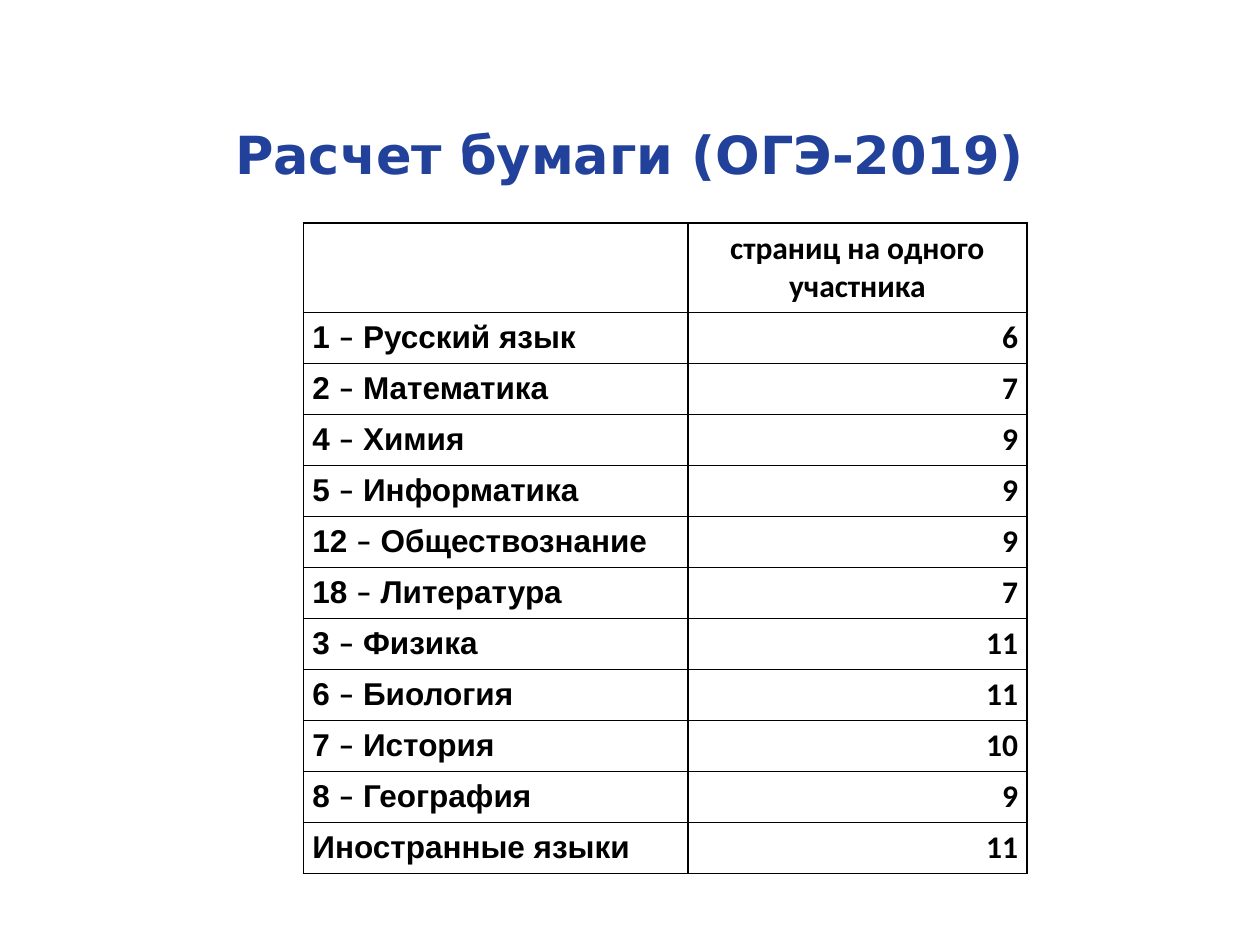
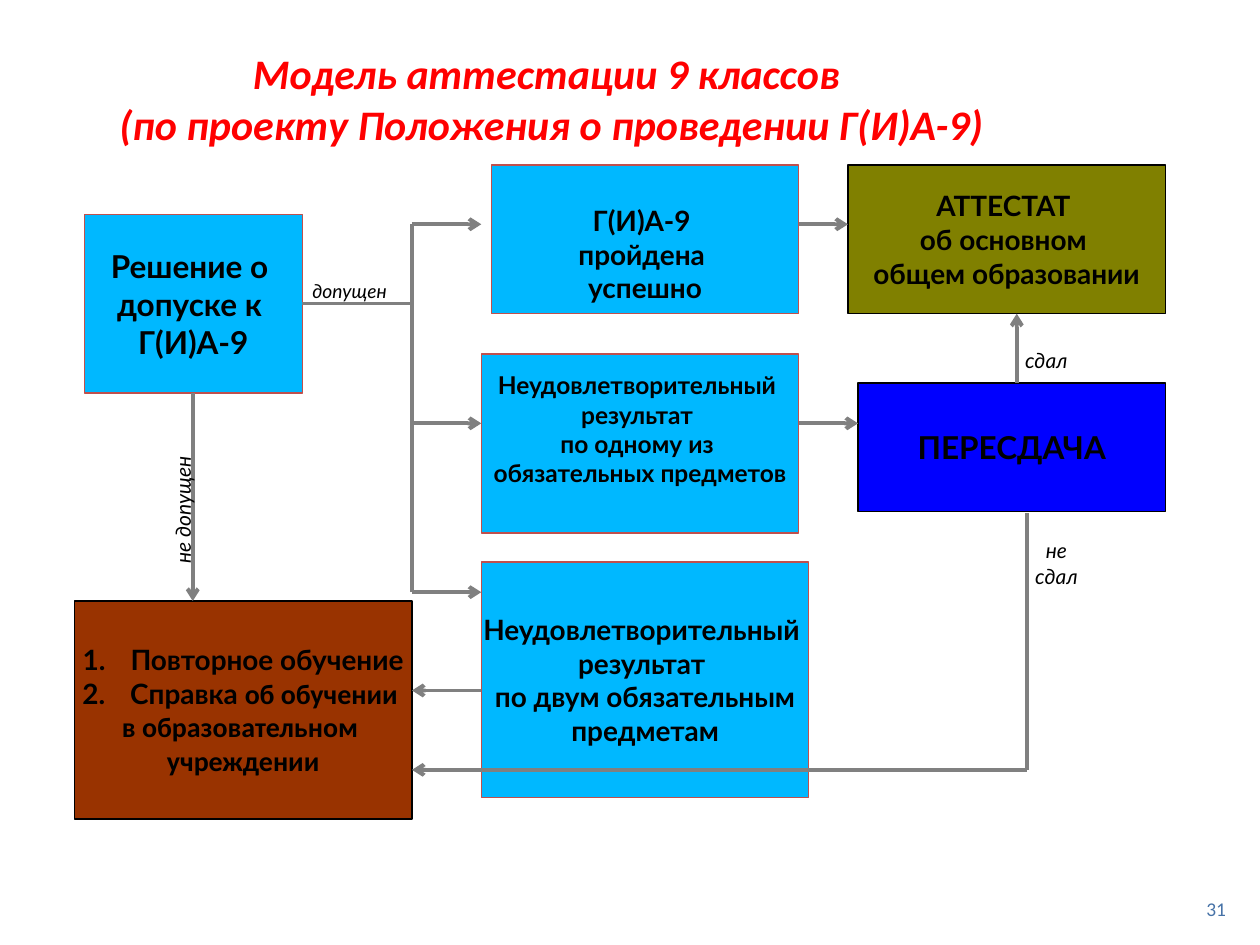
import pptx
import pptx.dml.color
import pptx.enum.shapes
import pptx.enum.text
import pptx.oxml
import pptx.oxml.ns
import pptx.util

Inches = pptx.util.Inches
Pt = pptx.util.Pt
ALIGN = pptx.enum.text.PP_ALIGN
ANCHOR = pptx.enum.text.MSO_ANCHOR

COLORS = {
    "heading": "22419B", "model": "FF0000", "number": "4672A7", "text": "000000",
    "white": "FFFFFF", "step": "00B8FF", "step_line": "C0504D", "retake": "0000FF",
    "certificate": "808000", "repeat": "993300", "arrow": "808080",
}

PAPER_TITLE = "Расчет бумаги (ОГЭ-2019)"
PAPER_HEADER = "страниц на одного участника"
PAPER_ROWS = [
    ("1", "Русский язык", 6),
    ("2", "Математика", 7),
    ("4", "Химия", 9),
    ("5", "Информатика", 9),
    ("12", "Обществознание", 9),
    ("18", "Литература", 7),
    ("3", "Физика", 11),
    ("6", "Биология", 11),
    ("7", "История", 10),
    ("8", "География", 9),
    ("", "Иностранные языки", 11),
]
TABLE_LEFT, TABLE_TOP = 2.41, 1.77
COLUMN_WIDTHS = (3.05, 2.69)
HEADER_HEIGHT, ROW_HEIGHT = 0.71, 0.405

MODEL_TITLE = "Модель аттестации 9 классов \v(по проекту Положения о проведении Г(И)А-9)"
PAGE_NUMBER = "31"

BOXES = {
    "retake": ((6.81, 3.04, 2.44, 1.02), "retake", "text", 18, ["ПЕРЕСДАЧА"]),
    "certificate": ((6.73, 1.31, 2.52, 1.18), "certificate", "text", 16,
                    ["АТТЕСТАТ ", "об основном ", "общем образовании"]),
    "repeat": ((0.59, 4.77, 2.68, 1.73), "repeat", "text", 16,
               ["Повторное обучение",
                [("Справка ", "Lato"), ("об обучении ", "Calibri")],
                [("в образовательном ", "Calibri")],
                [("учреждении", "Calibri")]]),
    "admission": ((0.67, 1.7, 1.73, 1.42), "step", "step_line", 18,
                  ["Решение о ", "допуске к ", "Г(И)А-9"]),
    "one_failed": ((3.82, 2.81, 2.52, 1.42), "step", "step_line", 14,
                   ["Неудовлетворительный ", "результат ", "по одному из ",
                    "обязательных предметов"]),
    "passed": ((3.9, 1.31, 2.44, 1.18), "step", "step_line", 16,
               ["Г(И)А-9 ", "пройдена ", "успешно"]),
    "two_failed": ((3.82, 4.46, 2.6, 1.87), "step", "step_line", 16,
                   ["Неудовлетворительный ", "результат ", "по двум обязательным",
                    "предметам"]),
}
NUMBERED_LINES = 2

BRANCH_X, STEP_X, FAIL_X = 3.27, 3.82, 8.15
ARROWS = [
    ((BRANCH_X, 1.78), (STEP_X, 1.78)),
    ((BRANCH_X, 3.36), (STEP_X, 3.36)),
    ((BRANCH_X, 4.7), (STEP_X, 4.7)),
    ((STEP_X, 5.48), (BRANCH_X, 5.48)),
    ((FAIL_X, 6.11), (BRANCH_X, 6.11)),
    ((6.34, 1.78), (6.73, 1.78)),
    ((6.34, 3.36), (6.81, 3.36)),
    ((8.07, 3.04), (8.07, 2.49)),
    ((1.53, 3.12), (1.53, 4.77)),
]
PLAIN_LINES = [
    ((2.4, 2.41), (BRANCH_X, 2.41)),
    ((BRANCH_X, 4.7), (BRANCH_X, 1.78)),
    ((FAIL_X, 6.11), (FAIL_X, 4.07)),
]
LABELS = [
    ("не допущен", (0.78, 3.8, 1.29, 0.25), 12, ALIGN.LEFT, 270),
    ("допущен", (2.38, 2.17, 0.89, 0.24), 11, ALIGN.LEFT, 0),
    ("сдал", (7.99, 2.71, 0.63, 0.25), 12, ALIGN.CENTER, 0),
    ("не сдал", (8.07, 4.22, 0.63, 0.4), 12, ALIGN.CENTER, 0),
]


def rgb(name):
    return pptx.dml.color.RGBColor.from_string(COLORS[name])


def add_xml(parent, body):
    namespace = pptx.oxml.ns.nsdecls("a")
    tag, rest = body.split(" ", 1)
    parent.append(pptx.oxml.parse_xml(f"<a:{tag} {namespace} {rest}"))


def write_text(frame, paragraphs, size, font="Lato", color="text", align=ALIGN.CENTER,
               bold=False, italic=False):
    for index, content in enumerate(paragraphs):
        paragraph = frame.paragraphs[0] if index == 0 else frame.add_paragraph()
        paragraph.alignment = align
        if isinstance(content, str):
            paragraph.text = content
            fonts = [font] * len(paragraph.runs)
        else:
            for text, _ in content:
                paragraph.add_run().text = text
            fonts = [name for _, name in content]
        for run, name in zip(paragraph.runs, fonts):
            run.font.name = name
            run.font.size = Pt(size)
            run.font.bold = bold
            run.font.italic = italic
            run.font.color.rgb = rgb(color)


def add_text(slide, place, paragraphs, size, anchor=ANCHOR.TOP, wrap=True, **style):
    shape = slide.shapes.add_textbox(*map(Inches, place))
    shape.text_frame.word_wrap = wrap
    shape.text_frame.vertical_anchor = anchor
    write_text(shape.text_frame, paragraphs, size, **style)
    return shape


def add_box(slide, place, fill, line, size, paragraphs):
    shape = slide.shapes.add_shape(pptx.enum.shapes.MSO_SHAPE.RECTANGLE, *map(Inches, place))
    shape.shadow.inherit = False
    shape.fill.solid()
    shape.fill.fore_color.rgb = rgb(fill)
    shape.line.color.rgb = rgb(line)
    shape.line.width = Pt(0.75)
    shape.text_frame.word_wrap = False
    shape.text_frame.vertical_anchor = ANCHOR.MIDDLE
    write_text(shape.text_frame, paragraphs, size, bold=True)
    return shape


def add_line(slide, start, end, width, arrow):
    connector = slide.shapes.add_connector(
        pptx.enum.shapes.MSO_CONNECTOR.STRAIGHT, *map(Inches, start + end))
    connector.line.color.rgb = rgb("arrow")
    connector.line.width = Pt(width)
    if arrow:
        add_xml(connector.line._get_or_add_ln(), 'tailEnd type="arrow"/>')
    add_xml(connector._element.spPr, "effectLst />")


def number_lines(paragraphs):
    for index, paragraph in enumerate(paragraphs):
        properties = paragraph._p.get_or_add_pPr()
        properties.set("marL", str(Inches(0.38)))
        properties.set("indent", str(-Inches(0.38)))
        if index < NUMBERED_LINES:
            add_xml(properties, 'buFont typeface="+mj-lt"/>')
            add_xml(properties, 'buAutoNum type="arabicPeriod"/>')


def format_cell(cell, paragraphs, align, anchor, fill=None):
    cell.margin_left = cell.margin_right = Inches(0.07)
    cell.margin_top = cell.margin_bottom = Inches(0.05)
    cell.vertical_anchor = anchor
    write_text(cell.text_frame, paragraphs, 18, font="Calibri", align=align, bold=True)
    properties = cell._tc.get_or_add_tcPr()
    for side in ("lnL", "lnR", "lnT", "lnB"):
        add_xml(properties, f'{side} w="{Pt(1)}"><a:solidFill><a:srgbClr val="{COLORS["text"]}"/>'
                            f'</a:solidFill></a:{side}>')
    if fill:
        cell.fill.solid()
        cell.fill.fore_color.rgb = rgb(fill)
    else:
        cell.fill.background()


def build_paper_slide(slide):
    add_text(slide, (0, 0.86, 10, 0.72), [PAPER_TITLE], 30, anchor=ANCHOR.MIDDLE,
             font="DejaVu Sans", color="heading", bold=True)
    height = HEADER_HEIGHT + ROW_HEIGHT * len(PAPER_ROWS)
    table = slide.shapes.add_table(
        len(PAPER_ROWS) + 1, 2, Inches(TABLE_LEFT), Inches(TABLE_TOP),
        Inches(sum(COLUMN_WIDTHS)), Inches(height)).table
    table.first_row = table.horz_banding = False
    for column, width in zip(table.columns, COLUMN_WIDTHS):
        column.width = Inches(width)
    for index, row in enumerate(table.rows):
        row.height = Inches(ROW_HEIGHT if index else HEADER_HEIGHT)
    format_cell(table.cell(0, 0), [], ALIGN.LEFT, ANCHOR.TOP)
    format_cell(table.cell(0, 1), [PAPER_HEADER], ALIGN.CENTER, ANCHOR.MIDDLE)
    for index, (code, subject, pages) in enumerate(PAPER_ROWS, 1):
        name = [(subject, "Arial")]
        if code:
            name = [(f"{code} ", "Arial"), ("–", "Calibri"), (f" {subject}", "Arial")]
        format_cell(table.cell(index, 0), [name], ALIGN.LEFT, ANCHOR.MIDDLE, "white")
        format_cell(table.cell(index, 1), [str(pages)], ALIGN.RIGHT, ANCHOR.BOTTOM)


def build_model_slide(slide):
    add_text(slide, (9, 7.08, 0.83, 0.27), [PAGE_NUMBER], 11.1, anchor=ANCHOR.MIDDLE,
             font="Calibri", color="number", align=ALIGN.RIGHT)
    boxes = {name: add_box(slide, *box) for name, box in BOXES.items()}
    number_lines(boxes["repeat"].text_frame.paragraphs)
    boxes["one_failed"].text_frame.margin_bottom = Inches(0.28)
    boxes["passed"].text_frame.margin_top = Inches(0.28)
    for start, end in ARROWS:
        add_line(slide, start, end, 2.25, True)
    for start, end in PLAIN_LINES:
        add_line(slide, start, end, 2, False)
    for text, place, size, align, rotation in LABELS:
        label = add_text(slide, place, [text], size, align=align, italic=True)
        label.rotation = rotation
    add_text(slide, (0.78, 0.33, 7.19, 0.91), [MODEL_TITLE], 24, wrap=False,
             font="Calibri", color="model", bold=True, italic=True)


def main():
    presentation = pptx.Presentation()
    presentation.slide_width = Inches(10)
    presentation.slide_height = Inches(7.5)
    for build in (build_paper_slide, build_model_slide):
        build(presentation.slides.add_slide(presentation.slide_layouts[6]))
    presentation.save("out.pptx")


if __name__ == "__main__":
    main()
